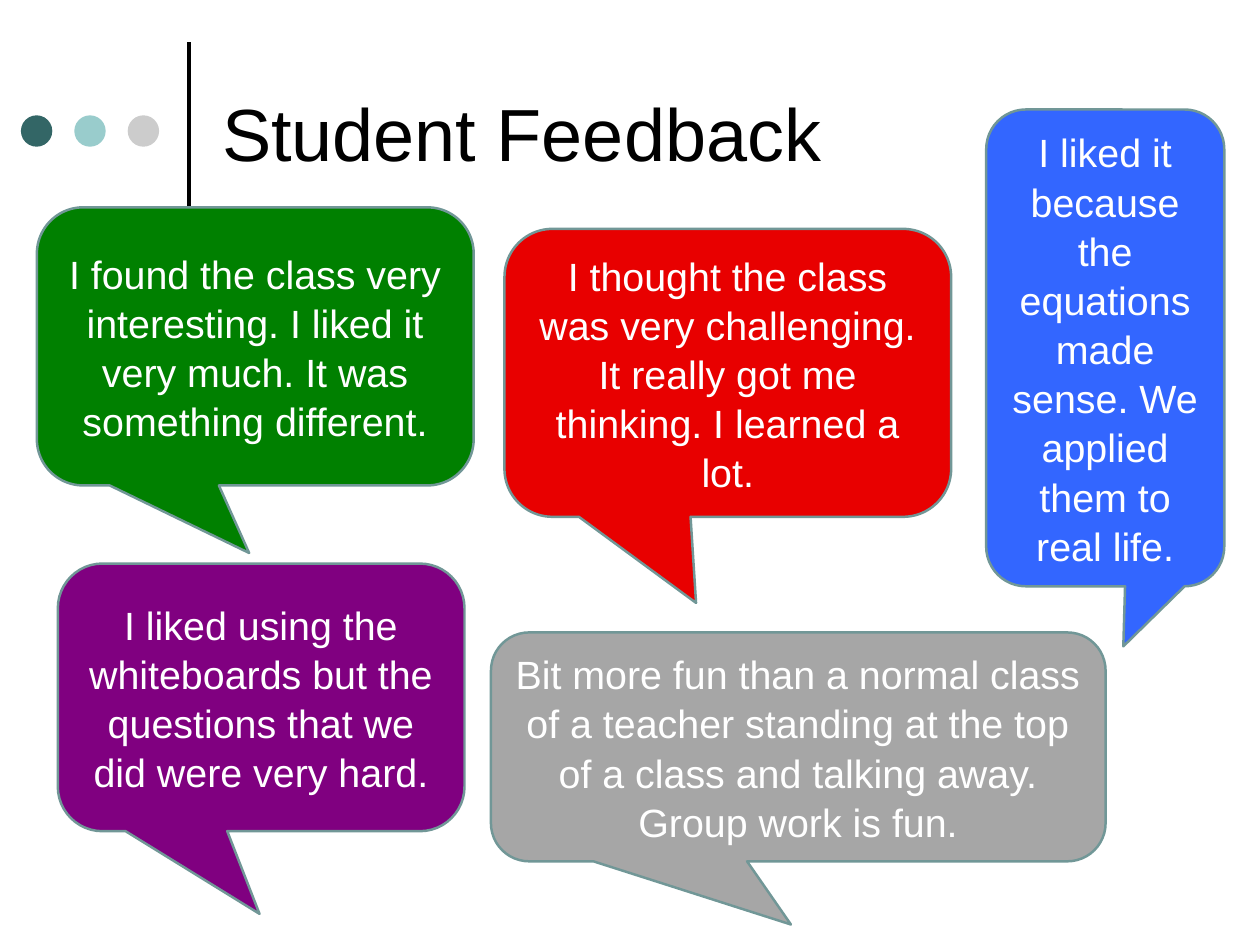
from lxml import etree
from pptx import Presentation
from pptx.dml.color import RGBColor
from pptx.enum import shapes, text
from pptx.oxml import ns
from pptx.util import Pt

FONT = "Arial"
DOTS = ["336666", "99CCCC", "CCCCCC"]
# left, top, width, height, tail x, tail y, fill, words
QUOTES = [
    (30, 168.5, 355, 226, -0.014, 0.743, "008000",
     "I found the class very interesting. I liked it very much. "
     "It was something different."),
    (47, 458, 330.5, 217.5, -0.004, 0.809, "800080",
     "I liked using the whiteboards but the questions that we did "
     "were very hard."),
    (399, 514, 499.5, 186, -0.012, 0.776, "A6A6A6",
     "Bit more fun than a normal class of a teacher standing at the top "
     "of a class and talking away. Group work is fun."),
    (410, 186, 363, 234, -0.071, 0.799, "E80000",
     "I thought the class was very challenging. It really got me thinking. "
     "I learned a lot."),
    (801.5, 89, 193.5, 387.5, 0.076, 0.626, "3366FF",
     "I liked it because the equations made sense. "
     "We applied them to real life."),
]


def color(code):
    return RGBColor.from_string(code)


def write(shape, words, size, ink, align):
    frame = shape.text_frame
    frame.text = words
    frame.word_wrap = True
    frame.vertical_anchor = text.MSO_ANCHOR.MIDDLE
    frame.margin_left = frame.margin_right = Pt(10)
    frame.margin_top = frame.margin_bottom = Pt(5)
    para = frame.paragraphs[0]
    para.alignment = align
    font = para.runs[0].font
    font.name, font.size = FONT, Pt(size)
    font.color.rgb = color(ink)
    return para


def add_rule(slide, x, top, end):
    rule = slide.shapes.add_connector(
        shapes.MSO_CONNECTOR.STRAIGHT, Pt(x), Pt(end), Pt(x), Pt(top))
    rule.line.color.rgb = color("000000")
    rule.line.width = Pt(3)
    etree.SubElement(rule._element.spPr, ns.qn("a:effectLst"))


def add_dot(slide, x, y, size, fill):
    dot = slide.shapes.add_shape(
        shapes.MSO_SHAPE.OVAL, Pt(x), Pt(y), Pt(size), Pt(size))
    dot.shadow.inherit = False
    dot.fill.solid()
    dot.fill.fore_color.rgb = color(fill)
    dot.line.fill.background()


def add_title(slide, words):
    box = slide.shapes.add_textbox(Pt(170.5), Pt(21.5), Pt(785), Pt(171.5))
    write(box, words, 60, "000000", text.PP_ALIGN.LEFT)


def add_quote(slide, x, y, wide, high, tail_x, tail_y, fill, words):
    """Add a speech bubble; the tail tip is a share of its size from its centre."""
    bubble = slide.shapes.add_shape(
        shapes.MSO_SHAPE.ROUNDED_RECTANGULAR_CALLOUT,
        Pt(x), Pt(y), Pt(wide), Pt(high))
    bubble.adjustments[0] = tail_x
    bubble.adjustments[1] = tail_y
    bubble.shadow.inherit = False
    bubble.fill.solid()
    bubble.fill.fore_color.rgb = color(fill)
    bubble.line.color.rgb = color("719797")
    bubble.line.width = Pt(2)
    para = write(bubble, words, 32, "FFFFFF", text.PP_ALIGN.CENTER)
    para.line_spacing = 1.04


def main():
    deck = Presentation()
    deck.slide_width, deck.slide_height = Pt(1024), Pt(768)
    slide = deck.slides.add_slide(deck.slide_layouts[6])
    add_rule(slide, 153.5, 34, 179)
    for i, fill in enumerate(DOTS):
        add_dot(slide, 17 + 43.4 * i, 93.75, 25.5, fill)
    add_title(slide, "Student Feedback")
    for quote in QUOTES:
        add_quote(slide, *quote)
    deck.save("out.pptx")


if __name__ == "__main__":
    main()
